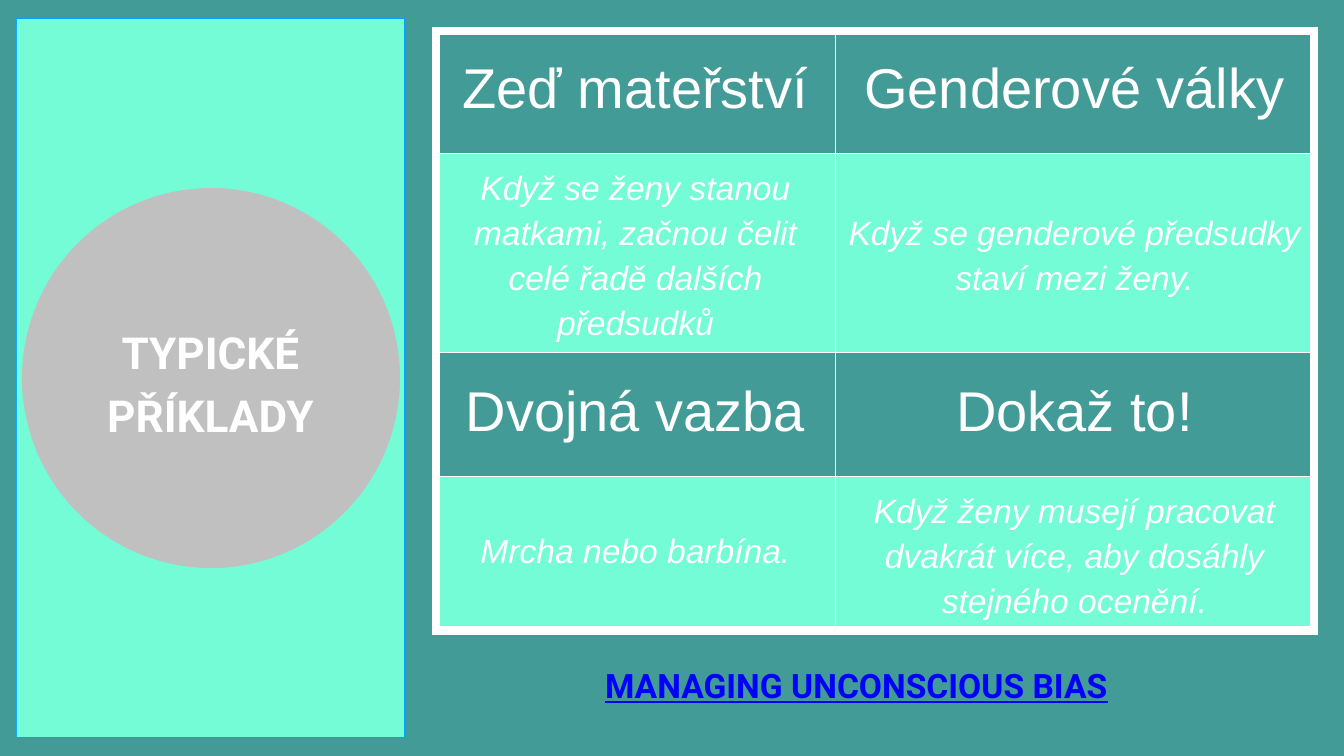
from lxml import etree
from pptx import Presentation
from pptx.dml.color import RGBColor
from pptx.enum.shapes import MSO_SHAPE
from pptx.enum.text import MSO_ANCHOR, PP_ALIGN
from pptx.oxml.ns import qn
from pptx.util import Pt

RECTANGLE, OVAL = MSO_SHAPE.RECTANGLE, MSO_SHAPE.OVAL
MIDDLE = MSO_ANCHOR.MIDDLE
LEFT, CENTER = PP_ALIGN.LEFT, PP_ALIGN.CENTER

EMU_PER_PX = 914400 / 50.4
TEAL, MINT, GREY, SKY, BLUE, WHITE = (
    "439B97", "73FCD6", "C0C0C0", "00A2FF", "0000FF", "FFFFFF")
INSET = 3
THIN, THICK = 1, 14

TITLE = "TYPICKÉ PŘÍKLADY"
FOOTER = "MANAGING UNCONSCIOUS BIAS"
HEADING = {"size": 80, "spacing": 0.9}
DESCRIPTION = {"size": 48, "spacing": 1.2, "italic": True}
SHORT_DESCRIPTION = {**DESCRIPTION, "spacing": 0.9}
EXAMPLES = [
    [("Zeď mateřství", HEADING), ("Genderové války", HEADING)],
    [("Když se ženy stanou matkami, začnou čelit celé řadě dalších předsudků",
      DESCRIPTION),
     ("Když se genderové předsudky staví mezi ženy.", DESCRIPTION)],
    [("Dvojná vazba", HEADING), ("Dokaž to!", HEADING)],
    [("Mrcha nebo barbína.", SHORT_DESCRIPTION),
     ("Když ženy musejí pracovat dvakrát více, aby dosáhly stejného ocenění.",
      DESCRIPTION)],
]

SLIDE_SIZE = (1344, 756)
PANEL = (17, 19, 387, 718)
CIRCLE = (22, 188, 378, 380)
TITLE_BOX = (27, 317, 367, 122)
FOOTER_BOX = (602, 665, 546, 45)
TABLE_ORIGIN = (436, 31)
COLUMN_WIDTHS = [399, 479]
ROW_HEIGHTS = [122, 199, 124, 154]


def px(length):
    return round(length * EMU_PER_PX)


def color(value):
    return RGBColor.from_string(value)


def write(frame, text, size, font="Arial", ink=WHITE, bold=False, italic=False,
          underline=False, spacing=0.9, align=CENTER):
    frame.word_wrap = True
    paragraph = frame.paragraphs[0]
    paragraph.alignment = align
    paragraph.line_spacing = spacing
    paragraph.space_before = Pt(45)
    run = paragraph.add_run()
    run.text = text
    run.font.name, run.font.size = font, Pt(size)
    run.font.bold, run.font.italic = bold, italic
    run.font.underline = underline
    run.font.color.rgb = color(ink)


def set_insets(holder):
    """Set equal margins on a text frame or a table cell."""
    holder.margin_left = holder.margin_right = px(INSET)
    holder.margin_top = holder.margin_bottom = px(INSET)
    holder.vertical_anchor = MIDDLE


def add_text(slide, box, text, **style):
    frame = slide.shapes.add_textbox(*map(px, box)).text_frame
    set_insets(frame)
    write(frame, text, **style)


def add_panel(slide, kind, box, fill, line=None):
    shape = slide.shapes.add_shape(kind, *map(px, box))
    shape.shadow.inherit = False
    shape.fill.solid()
    shape.fill.fore_color.rgb = color(fill)
    if line:
        shape.line.color.rgb = color(line)
        shape.line.width = Pt(2)
    else:
        shape.line.fill.background()


def set_borders(cell, widths):
    """Draw white borders; widths maps the sides L, R, T, B to points."""
    properties = cell._tc.get_or_add_tcPr()
    for side, width in widths.items():
        line = etree.SubElement(properties, qn(f"a:ln{side}"), w=str(Pt(width)))
        fill = etree.SubElement(line, qn("a:solidFill"))
        etree.SubElement(fill, qn("a:srgbClr"), val=WHITE)


def add_examples(slide):
    row_count, column_count = len(ROW_HEIGHTS), len(COLUMN_WIDTHS)
    box = (*TABLE_ORIGIN, sum(COLUMN_WIDTHS), sum(ROW_HEIGHTS))
    table = slide.shapes.add_table(row_count, column_count, *map(px, box)).table
    table.first_row = table.horz_banding = False
    for column, width in zip(table.columns, COLUMN_WIDTHS):
        column.width = px(width)
    for row, height in zip(table.rows, ROW_HEIGHTS):
        row.height = px(height)

    for r, examples in enumerate(EXAMPLES):
        for c, (text, style) in enumerate(examples):
            cell = table.cell(r, c)
            set_insets(cell)
            outer = {"L": c == 0, "R": c == column_count - 1,
                     "T": r == 0, "B": r == row_count - 1}
            set_borders(cell, {side: THICK if edge else THIN
                               for side, edge in outer.items()})
            if style is HEADING:
                cell.fill.background()
            else:
                cell.fill.solid()
                cell.fill.fore_color.rgb = color(MINT)
            write(cell.text_frame, text, **style)


def main():
    presentation = Presentation()
    presentation.slide_width, presentation.slide_height = map(px, SLIDE_SIZE)
    slide = presentation.slides.add_slide(presentation.slide_layouts[6])
    slide.background.fill.solid()
    slide.background.fill.fore_color.rgb = color(TEAL)

    add_panel(slide, RECTANGLE, PANEL, MINT, line=SKY)
    add_panel(slide, RECTANGLE, PANEL, MINT)
    add_panel(slide, OVAL, CIRCLE, GREY)
    add_text(slide, TITLE_BOX, TITLE, size=63, font="Roboto", bold=True,
             spacing=1.2)
    add_examples(slide)
    add_text(slide, FOOTER_BOX, FOOTER, size=48, font="Roboto", ink=BLUE,
             bold=True, underline=True, align=LEFT)
    presentation.save("out.pptx")


if __name__ == "__main__":
    main()
